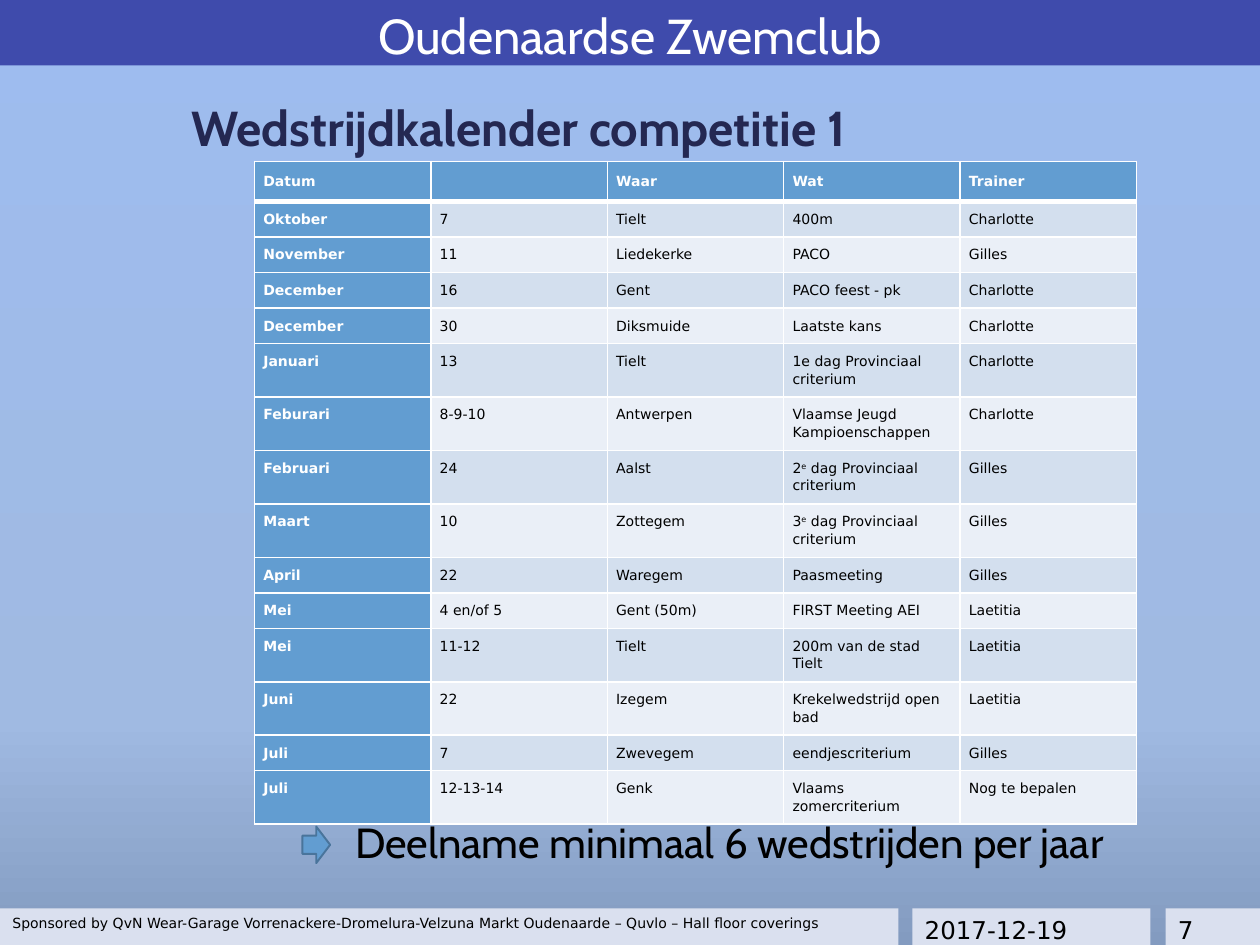
from copy import deepcopy

from lxml import etree
from pptx import Presentation
from pptx.dml.color import RGBColor
from pptx.enum.shapes import MSO_SHAPE
from pptx.enum.text import MSO_ANCHOR, PP_ALIGN
from pptx.oxml.ns import qn
from pptx.util import Inches, Pt

RECTANGLE, RIGHT_ARROW = MSO_SHAPE.RECTANGLE, MSO_SHAPE.RIGHT_ARROW
TOP, MIDDLE = MSO_ANCHOR.TOP, MSO_ANCHOR.MIDDLE
LEFT, CENTER = PP_ALIGN.LEFT, PP_ALIGN.CENTER

HEADING_FONT, BODY_FONT = "Cabin", "DejaVu Sans"
WHITE, BLACK, NAVY = "FFFFFF", "000000", "242852"
BLUE, BLUE_EDGE, FOOTER_FILL = "629DD1", "49749B", "DAE0EF"
BANDS = ("D3DFEE", "EAEFF7")
BACKGROUND_STOPS = ((0, "9EBCEF"), (76, "A0BAE2"), (100, "839BC0"))

COLUMN_WIDTH = 1.4
HEADER_HEIGHT, ONE_LINE, TWO_LINES = 0.32, 0.24, 0.36
# "^" stands before a raised letter
CALENDAR = [
    ("Datum", "", "Waar", "Wat", "Trainer"),
    ("Oktober", "7", "Tielt", "400m", "Charlotte"),
    ("November", "11", "Liedekerke", "PACO", "Gilles"),
    ("December", "16", "Gent", "PACO feest - pk", "Charlotte"),
    ("December", "30", "Diksmuide", "Laatste kans", "Charlotte"),
    ("Januari", "13", "Tielt", "1e dag Provinciaal criterium", "Charlotte"),
    ("Feburari", "8-9-10", "Antwerpen", "Vlaamse Jeugd Kampioenschappen", "Charlotte"),
    ("Februari", "24", "Aalst", "2^e dag Provinciaal criterium", "Gilles"),
    ("Maart", "10", "Zottegem", "3^e dag Provinciaal criterium", "Gilles"),
    ("April", "22", "Waregem", "Paasmeeting", "Gilles"),
    ("Mei", "4 en/of 5", "Gent (50m)", "FIRST Meeting AEI", "Laetitia"),
    ("Mei", "11-12", "Tielt", "200m van de stad Tielt", "Laetitia"),
    ("Juni", "22", "Izegem", "Krekelwedstrijd open bad", "Laetitia"),
    ("Juli", "7", "Zwevegem", "eendjescriterium", "Gilles"),
    ("Juli", "12-13-14", "Genk", "Vlaams zomercriterium", "Nog te bepalen"),
]
SPONSORS = (
    "Sponsored by QvN Wear-Garage Vorrenackere-Dromelura-Velzuna Markt Oudenaarde"
    " – Quvlo – Hall floor coverings"
)


def color(value):
    return RGBColor.from_string(value)


def style_run(run, size, font, text_color, bold=False):
    run.font.size, run.font.name, run.font.bold = Pt(size), font, bold
    run.font.color.rgb = color(text_color)


def write(shape, text, size, font, text_color, bold=False, align=LEFT, anchor=TOP, wrap=True):
    frame = shape.text_frame
    frame.text = text
    frame.word_wrap, frame.vertical_anchor = wrap, anchor
    frame.paragraphs[0].alignment = align
    style_run(frame.paragraphs[0].runs[0], size, font, text_color, bold)
    return frame


def add_filled(slide, kind, box, fill):
    shape = slide.shapes.add_shape(kind, *map(Inches, box))
    shape.shadow.inherit = False
    shape.fill.solid()
    shape.fill.fore_color.rgb = color(fill)
    shape.line.fill.background()
    return shape


def paint_background(slide):
    fill = slide.background.fill
    fill.gradient()
    fill.gradient_angle = 270
    stop_list = slide.element.find(".//" + qn("a:gsLst"))
    stop_list.append(deepcopy(stop_list[0]))
    for stop, element, (position, value) in zip(fill.gradient_stops, stop_list, BACKGROUND_STOPS):
        stop.color.rgb = color(value)
        element.set("pos", str(position * 1000))


def add_club_bar(slide, box):
    bar = add_filled(slide, RECTANGLE, box, "000080")
    solid_color = bar.element.spPr.find(".//" + qn("a:srgbClr"))
    etree.SubElement(solid_color, qn("a:alpha"), val="60000")
    frame = write(bar, "Oudenaardse Zwemclub", 28, HEADING_FONT, WHITE, align=CENTER)
    frame.margin_left = frame.margin_right = Inches(0.04)
    frame.margin_top = frame.margin_bottom = Inches(0.04)


def add_title(slide, box):
    title = slide.shapes.add_textbox(*map(Inches, box))
    frame = write(title, "Wedstrijdkalender competitie 1", 28, HEADING_FONT, NAVY,
                  bold=True, anchor=MIDDLE)
    frame.margin_left = frame.margin_right = 0


def add_footer(slide, top, height):
    panels = (
        (7.24, 1.89, "2017-12-19", 14),
        (9.25, 0.79, "7", 14),
        (0, 7.13, SPONSORS, 8),
    )
    for left, width, text, size in panels:
        panel = add_filled(slide, RECTANGLE, (left, top, width, height), FOOTER_FILL)
        write(panel, text, size, BODY_FONT, BLACK)


def add_requirement(slide, box):
    left, top, width, height = box
    note = slide.shapes.add_textbox(*map(Inches, box))
    write(note, "Deelname minimaal 6 wedstrijden per jaar", 24, HEADING_FONT, BLACK, wrap=False)
    arrow = add_filled(slide, RIGHT_ARROW, (left - 0.32, top + 0.13, 0.22, 0.29), BLUE)
    arrow.line.color.rgb = color(BLUE_EDGE)
    arrow.line.width = Pt(1.1)


def set_borders(cell, top, bottom):
    properties = cell._tc.get_or_add_tcPr()
    sides = (("a:lnL", 1), ("a:lnR", 1), ("a:lnT", top), ("a:lnB", bottom))
    for position, (tag, width) in enumerate(sides):
        line = etree.Element(qn(tag), w=str(Pt(width)))
        solid = etree.SubElement(line, qn("a:solidFill"))
        etree.SubElement(solid, qn("a:srgbClr"), val=WHITE)
        properties.insert(position, line)


def fill_cell(cell, text, fill, text_color, bold):
    cell.fill.solid()
    cell.fill.fore_color.rgb = color(fill)
    cell.margin_left = cell.margin_right = Inches(0.07)
    cell.margin_top = cell.margin_bottom = Inches(0.07)
    paragraph = cell.text_frame.paragraphs[0]
    paragraph.line_spacing, paragraph.space_after = 1.07, Pt(12)
    before, _, raised = text.partition("^")
    for part, is_raised in ((before, False), (raised[:1], True), (raised[1:], False)):
        if part:
            run = paragraph.add_run()
            run.text = part
            style_run(run, 8, BODY_FONT, text_color, bold)
            if is_raised:
                run._r.get_or_add_rPr().set("baseline", "30000")
    if not text:
        etree.SubElement(paragraph._p, qn("a:endParaRPr"), sz="800")


def add_calendar(slide, left, top):
    heights = [HEADER_HEIGHT] + [
        TWO_LINES if len(row[3]) > 17 else ONE_LINE for row in CALENDAR[1:]
    ]
    columns = len(CALENDAR[0])
    box = (left, top, columns * COLUMN_WIDTH, sum(heights))
    table = slide.shapes.add_table(len(CALENDAR), columns, *map(Inches, box)).table
    table.first_row = table.horz_banding = False
    for column in table.columns:
        column.width = Inches(COLUMN_WIDTH)
    for row_index, (row, height) in enumerate(zip(CALENDAR, heights)):
        table.rows[row_index].height = Inches(height)
        for column_index, text in enumerate(row):
            cell = table.cell(row_index, column_index)
            heading = row_index == 0 or column_index == 0
            fill = BLUE if heading else BANDS[(row_index - 1) % 2]
            fill_cell(cell, text, fill, WHITE if heading else BLACK, heading)
            cell.vertical_anchor = MIDDLE if row_index == 0 else TOP
            set_borders(cell, 3 if row_index == 1 else 1, 3 if row_index == 0 else 1)


def main():
    presentation = Presentation()
    presentation.slide_width, presentation.slide_height = Inches(10), Inches(7.5)
    slide = presentation.slides.add_slide(presentation.slide_layouts[6])
    paint_background(slide)
    # Header
    add_club_bar(slide, (0, 0, 10, 0.52))
    add_title(slide, (1.52, 0.51, 8.12, 1))
    # Footer
    add_footer(slide, 7.21, 0.29)
    # Calendar, lying over the requirement line
    add_requirement(slide, (2.72, 6.43, 6.51, 0.51))
    add_calendar(slide, 2.02, 1.28)
    presentation.save("out.pptx")


if __name__ == "__main__":
    main()
